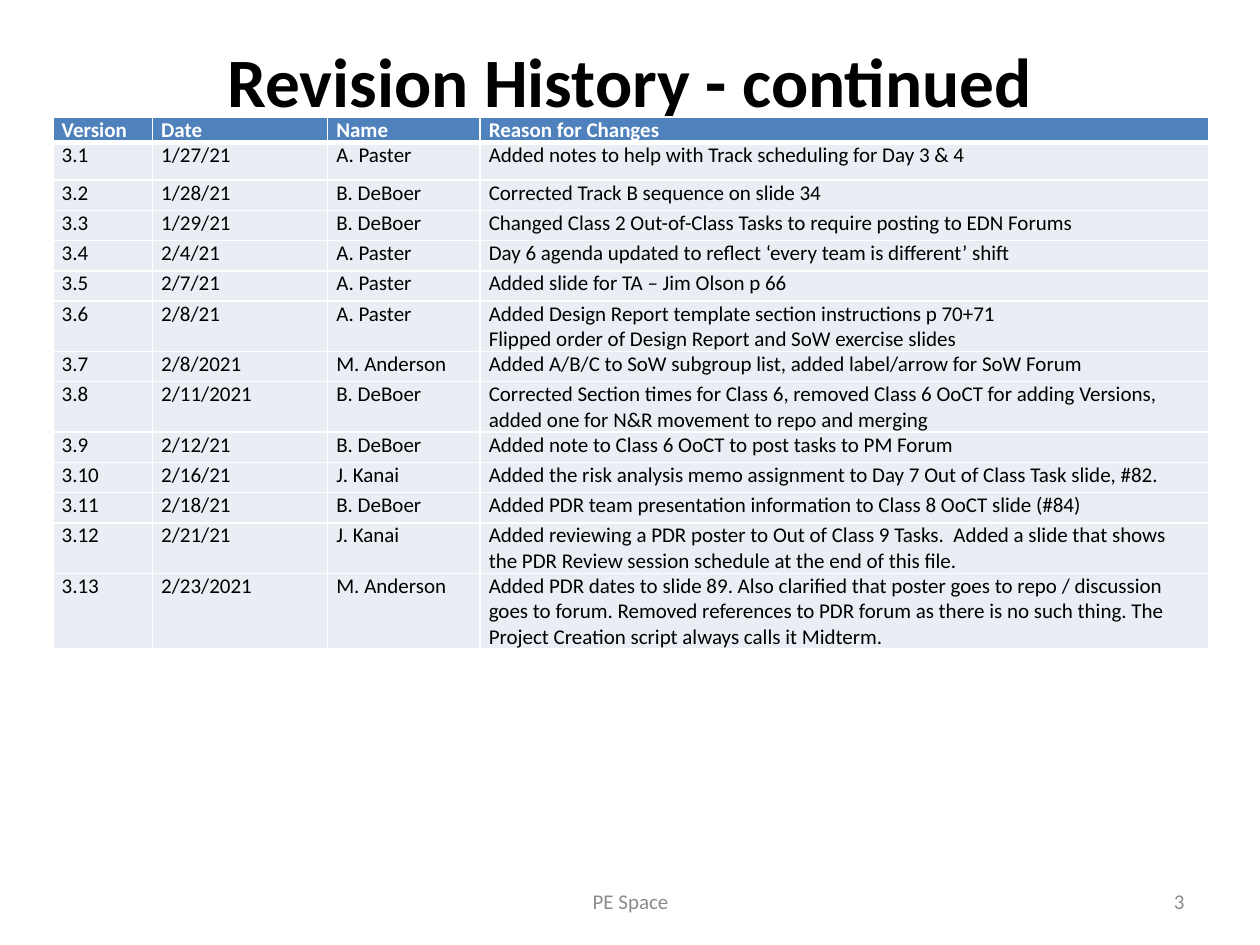
from lxml import etree
from pptx import Presentation
from pptx.dml.color import RGBColor
from pptx.enum.text import MSO_ANCHOR, PP_ALIGN
from pptx.oxml.ns import qn
from pptx.util import Inches, Pt

LEFT, CENTER, RIGHT = PP_ALIGN.LEFT, PP_ALIGN.CENTER, PP_ALIGN.RIGHT
TOP, MIDDLE = MSO_ANCHOR.TOP, MSO_ANCHOR.MIDDLE
FONT = "Calibri"
WHITE, BLACK, BLUE, PALE, GRAY = "FFFFFF", "000000", "4F81BD", "E9EDF4", "8C8C8C"

WIDTHS = [0.79, 1.39, 1.21, 5.78]
HEAD_H, FIRST_H, ROW_H = 0.2, 0.3, 0.24
HEAD = ("Version", "Date", "Name", "Reason for Changes")
ROWS = [
    ("3.1", "1/27/21", "A. Paster",
     "Added notes to help with Track scheduling for Day 3 & 4"),
    ("3.2", "1/28/21", "B. DeBoer", "Corrected Track B sequence on slide 34"),
    ("3.3", "1/29/21", "B. DeBoer",
     "Changed Class 2 Out-of-Class Tasks to require posting to EDN Forums"),
    ("3.4", "2/4/21", "A. Paster",
     "Day 6 agenda updated to reflect ‘every team is different’ shift"),
    ("3.5", "2/7/21", "A. Paster", "Added slide for TA – Jim Olson p 66"),
    ("3.6", "2/8/21", "A. Paster",
     "Added Design Report template section instructions p 70+71\n"
     "Flipped order of Design Report and SoW exercise slides"),
    ("3.7", "2/8/2021", "M. Anderson",
     "Added A/B/C to SoW subgroup list, added label/arrow for SoW Forum"),
    ("3.8", "2/11/2021", "B. DeBoer",
     "Corrected Section times for Class 6, removed Class 6 OoCT for adding "
     "Versions, added one for N&R movement to repo and merging"),
    ("3.9", "2/12/21", "B. DeBoer",
     "Added note to Class 6 OoCT to post tasks to PM Forum"),
    ("3.10", "2/16/21", "J. Kanai",
     "Added the risk analysis memo assignment to Day 7 Out of Class Task slide, #82."),
    ("3.11", "2/18/21", "B. DeBoer",
     "Added PDR team presentation information to Class 8 OoCT slide (#84)"),
    ("3.12", "2/21/21", "J. Kanai",
     "Added reviewing a PDR poster to Out of Class 9 Tasks.  Added a slide "
     "that shows the PDR Review session schedule at the end of this file."),
    ("3.13", "2/23/2021", "M. Anderson",
     "Added PDR dates to slide 89. Also clarified that poster goes to repo / "
     "discussion goes to forum. Removed references to PDR forum as there is no "
     "such thing. The Project Creation script always calls it Midterm."),
]


def rgb(code):
    return RGBColor.from_string(code)


def write(frame, text, size=12, color=BLACK, bold=False, align=LEFT):
    frame.word_wrap = True
    frame.text = text
    for para in frame.paragraphs:
        para.alignment = align
        for run in para.runs:
            font = run.font
            font.name, font.size, font.bold = FONT, Pt(size), bold
            font.color.rgb = rgb(color)


def add_text(slide, text, x, y, w, h, anchor=MIDDLE, **style):
    box = slide.shapes.add_textbox(Inches(x), Inches(y), Inches(w), Inches(h))
    frame = box.text_frame
    frame.vertical_anchor = anchor
    frame.margin_top = frame.margin_bottom = 0
    write(frame, text, **style)


def add_edges(cell, **widths):
    # Border lines must come before the fill in the cell properties
    props = cell._tc.get_or_add_tcPr()
    for place, side in enumerate("LRTB"):
        line = etree.Element(qn("a:ln" + side), w=str(Pt(widths.get(side, 1))))
        fill = etree.SubElement(line, qn("a:solidFill"))
        etree.SubElement(fill, qn("a:srgbClr"), val=WHITE)
        props.insert(place, line)


def fill_cell(cell, text, fill, edges, **style):
    cell.margin_left = cell.margin_right = Inches(0.07)
    cell.margin_top = cell.margin_bottom = 0
    cell.fill.solid()
    cell.fill.fore_color.rgb = rgb(fill)
    add_edges(cell, **edges)
    write(cell.text_frame, text, **style)


def add_log(slide, x, y):
    heights = [HEAD_H, FIRST_H] + [ROW_H] * (len(ROWS) - 1)
    table = slide.shapes.add_table(
        len(heights), len(WIDTHS), Inches(x), Inches(y),
        Inches(sum(WIDTHS)), Inches(sum(heights))).table
    for col, width in zip(table.columns, WIDTHS):
        col.width = Inches(width)
    for row, height in zip(table.rows, heights):
        row.height = Inches(height)

    # Header row, with a thick rule under it
    for col, text in enumerate(HEAD):
        fill_cell(table.cell(0, col), text, BLUE, {"B": 3}, color=WHITE, bold=True)
    # Revision rows
    for row, entry in enumerate(ROWS, 1):
        edges = {"T": 3} if row == 1 else {}
        for col, text in enumerate(entry):
            fill_cell(table.cell(row, col), text, PALE, edges)


def main():
    deck = Presentation()
    deck.slide_width, deck.slide_height = Inches(10), Inches(7.5)
    slide = deck.slides.add_slide(deck.slide_layouts[6])

    # Title
    add_text(slide, "Revision History - continued", 0.5, 0.3, 9, 1.25,
             anchor=TOP, size=39.6, bold=True, align=CENTER)
    # Revision table
    add_log(slide, 0.42, 0.93)
    # Footer and page number
    add_text(slide, "PE Space", 3.42, 6.95, 3.17, 0.4, color=GRAY, align=CENTER)
    add_text(slide, "3", 7.17, 6.95, 2.33, 0.4, color=GRAY, align=RIGHT)

    deck.save("out.pptx")


if __name__ == "__main__":
    main()
